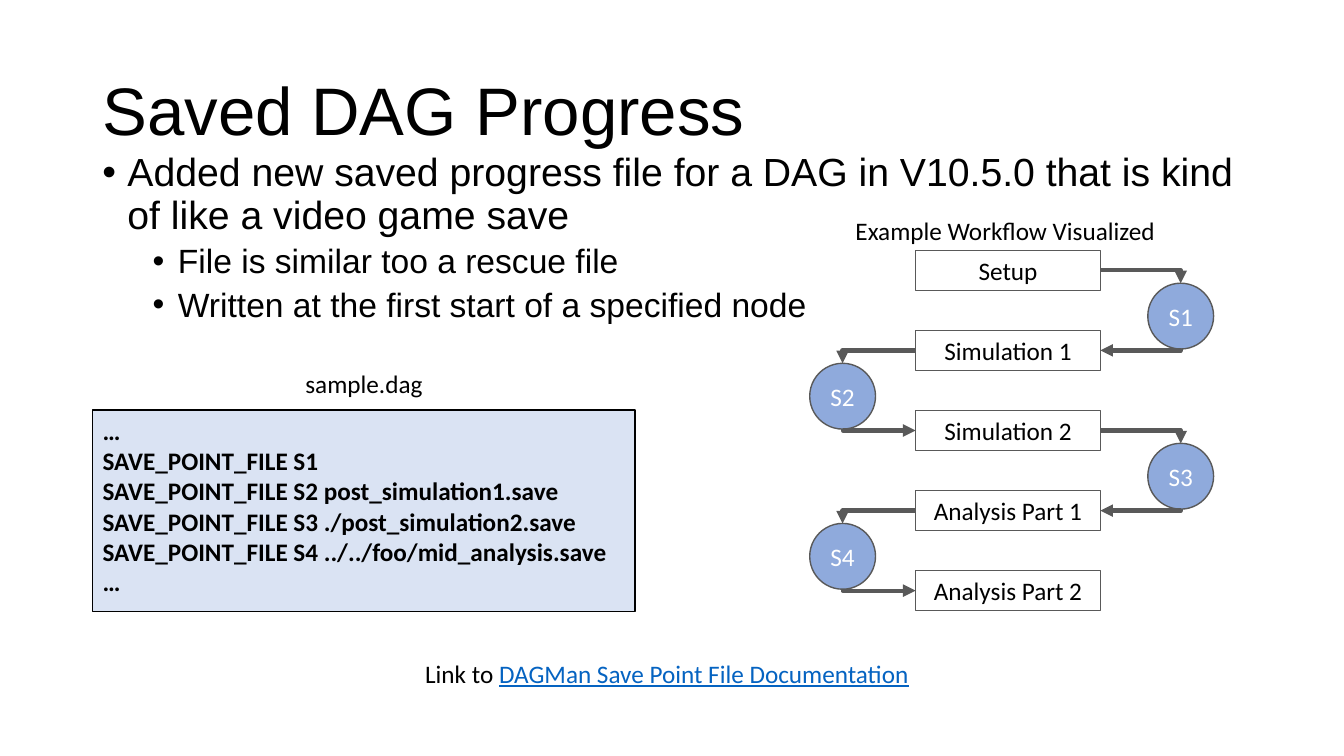
from pptx import Presentation
from pptx.dml.color import RGBColor
from pptx.enum import shapes, text
from pptx.oxml import ns
from pptx.util import Pt
from lxml import etree

TITLE = "Saved DAG Progress"
BULLETS = [
    (0, "Added new saved progress file for a DAG in V10.5.0 that is kind of like a video game save"),
    (1, "File is similar too a rescue file"),
    (1, "Written at the first start of a specified node"),
]
CODE = [
    "…",
    "SAVE_POINT_FILE S1",
    "SAVE_POINT_FILE S2 post_simulation1.save",
    "SAVE_POINT_FILE S3 ./post_simulation2.save",
    "SAVE_POINT_FILE S4 ../../foo/mid_analysis.save",
    "…",
]
CODE_NAME = "sample.dag"
DIAGRAM_NAME = "Example Workflow Visualized"
STEPS = ["Setup", "Simulation 1", "Simulation 2", "Analysis Part 1", "Analysis Part 2"]
SAVES = ["S1", "S2", "S3", "S4"]
LINK = [("Link to ", "black", False), ("DAGMan Save Point File Documentation", "link", True)]

COLORS = {"black": "000000", "white": "FFFFFF", "gray": "595959",
          "code": "DAE3F3", "save": "8FAADC", "link": "0563C1"}
LEVELS = [(28, 18, 10), (24, 54, 5)]

STEP_X, STEP_Y, STEP_W, STEP_H, PITCH = 654, 178.6, 132, 29, 57.2
SAVE_D, SAVE_DROP = 47, 23.7
RIGHT_X, LEFT_X = 843.4, 601.9


def rgb(name):
    return RGBColor.from_string(COLORS[name])


def add_run(p, words, size=18, font="Calibri", color="black", bold=False, underline=False):
    r = p.add_run()
    r.text = words
    r.font.size = Pt(size)
    r.font.name = font
    r.font.color.rgb = rgb(color)
    r.font.bold = bold
    r.font.underline = underline


def add_text(x, y, w, h):
    tf = s.shapes.add_textbox(Pt(x), Pt(y), Pt(w), Pt(h)).text_frame
    tf.word_wrap = True
    return tf


def add_box(kind, x, y, w, h, fill, line, width):
    sp = s.shapes.add_shape(kind, Pt(x), Pt(y), Pt(w), Pt(h))
    sp.shadow.inherit = False
    if fill:
        sp.fill.solid()
        sp.fill.fore_color.rgb = rgb(fill)
    else:
        sp.fill.background()
    sp.line.color.rgb = rgb(line)
    sp.line.width = Pt(width)
    sp.text_frame.vertical_anchor = text.MSO_ANCHOR.MIDDLE
    return sp.text_frame


def add_label(tf, words, color="black"):
    p = tf.paragraphs[0]
    p.alignment = text.PP_ALIGN.CENTER
    add_run(p, words, color=color)


def add_arrow(x1, y1, x2, y2, rotation=0):
    if rotation:
        mx, my = (x1 + x2) / 2, (y1 + y2) / 2
        half_w, half_h = (y2 - y1) / 2, abs(x2 - x1) / 2
        if rotation == 270:
            half_w = -half_w
        x1, y1, x2, y2 = mx - half_w, my - half_h, mx + half_w, my + half_h
    cx = s.shapes.add_connector(shapes.MSO_CONNECTOR.ELBOW, Pt(x1), Pt(y1), Pt(x2), Pt(y2))
    cx.line.color.rgb = rgb("gray")
    cx.line.width = Pt(3)
    sp_pr = cx._element.spPr
    sp_pr.find(ns.qn("a:prstGeom")).set("prst", "bentConnector2")
    sp_pr.find(ns.qn("a:xfrm")).set("rot", str(rotation * 60000))
    etree.SubElement(sp_pr.find(ns.qn("a:ln")), ns.qn("a:tailEnd"), type="triangle")
    etree.SubElement(sp_pr, ns.qn("a:effectLst"))


prs = Presentation()
prs.slide_width, prs.slide_height = Pt(960), Pt(540)
s = prs.slides.add_slide(prs.slide_layouts[5])

title = s.shapes.title
title.left, title.top, title.width, title.height = Pt(66), Pt(28.8), Pt(828), Pt(104.4)
tf = title.text_frame
tf.auto_size = text.MSO_AUTO_SIZE.NONE
tf.vertical_anchor = text.MSO_ANCHOR.MIDDLE
p = tf.paragraphs[0]
p.alignment = text.PP_ALIGN.LEFT
p.line_spacing = 0.9
add_run(p, TITLE, 48, "Arial")

tf = add_text(66, 105.8, 828, 144)
for i, (level, words) in enumerate(BULLETS):
    size, indent, before = LEVELS[level]
    p = tf.add_paragraph() if i else tf.paragraphs[0]
    p.level = level
    p_pr = p._p.get_or_add_pPr()
    p_pr.set("marL", str(Pt(indent)))
    p_pr.set("indent", str(Pt(-18)))
    etree.SubElement(p_pr, ns.qn("a:buFont"), typeface="Arial")
    etree.SubElement(p_pr, ns.qn("a:buChar"), char="•")
    p.line_spacing = 0.9
    p.space_before = Pt(before if i else 0)
    add_run(p, words, size, "Arial")

tf = add_box(shapes.MSO_SHAPE.RECTANGLE, 66.2, 293, 387.4, 144, "code", "black", 1)
tf.vertical_anchor = text.MSO_ANCHOR.TOP
for i, words in enumerate(CODE):
    p = tf.add_paragraph() if i else tf.paragraphs[0]
    p.alignment = text.PP_ALIGN.LEFT
    add_run(p, words, bold=True)

add_label(add_text(170, 259.2, 180, 29), CODE_NAME)
add_run(add_text(604, 150.5, 230.4, 29).paragraphs[0], DIAGRAM_NAME)
p = add_text(296.6, 466.6, 366.5, 29).paragraphs[0]
for words, color, underline in LINK:
    add_run(p, words, color=color, underline=underline)

for i, words in enumerate(STEPS):
    tf = add_box(shapes.MSO_SHAPE.RECTANGLE, STEP_X, STEP_Y + i * PITCH, STEP_W, STEP_H,
                 None, "gray", 0.75)
    add_label(tf, words)

for i, words in enumerate(SAVES):
    on_right = i % 2 == 0
    save_x = RIGHT_X if on_right else LEFT_X
    side_x = STEP_X + STEP_W if on_right else STEP_X
    step_mid = STEP_Y + i * PITCH + STEP_H / 2
    save_y = STEP_Y + i * PITCH + SAVE_DROP
    tf = add_box(shapes.MSO_SHAPE.OVAL, save_x - SAVE_D / 2, save_y, SAVE_D, SAVE_D,
                 "save", "gray", 1)
    add_label(tf, words, "white")
    add_arrow(side_x, step_mid, save_x, save_y)
    add_arrow(save_x, save_y + SAVE_D, side_x, step_mid + PITCH, 90 if on_right else 270)

prs.save("out.pptx")
